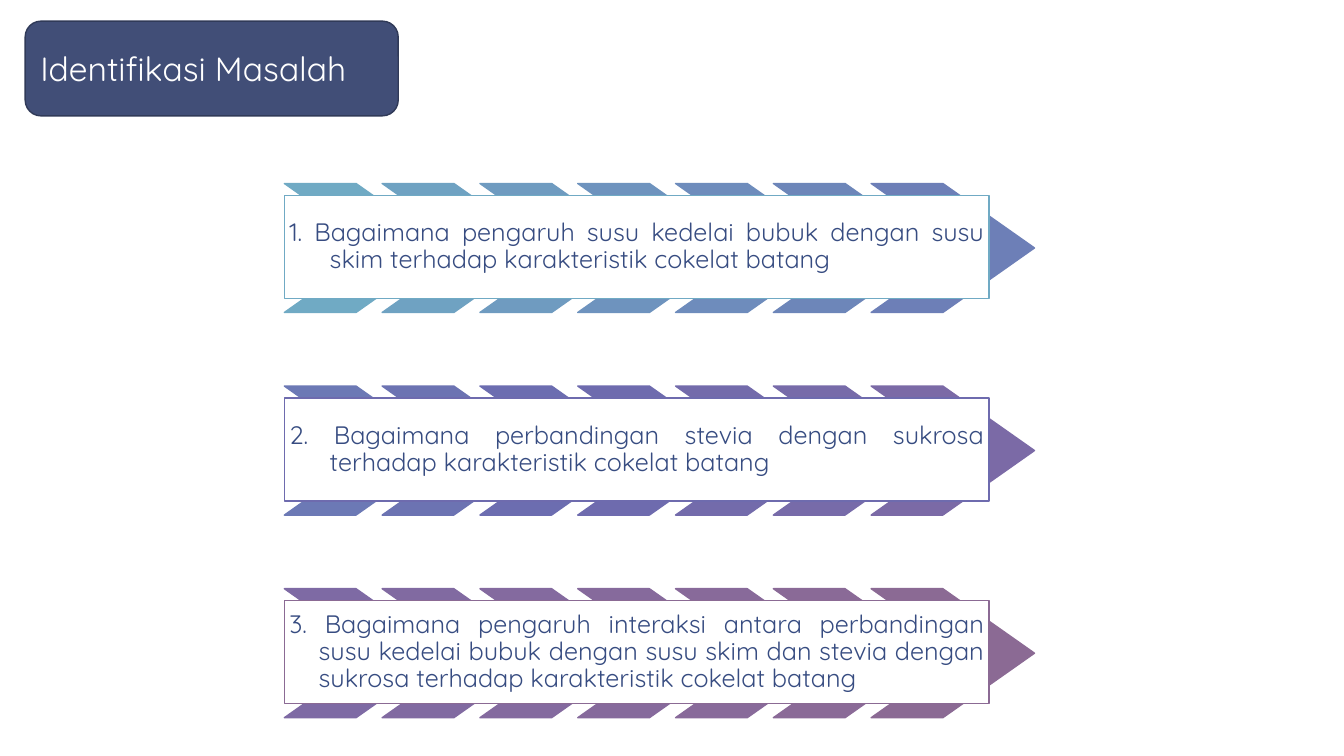
from lxml.etree import SubElement
from pptx import Presentation
from pptx.dml.color import RGBColor
from pptx.enum.shapes import MSO_SHAPE
from pptx.enum.text import MSO_ANCHOR, MSO_AUTO_SIZE, PP_ALIGN
from pptx.util import Emu, Pt

TITLE = "Identifikasi Masalah"
PROBLEMS = [
    ("1. Bagaimana pengaruh susu kedelai bubuk dengan susu skim terhadap karakteristik cokelat batang",
     40, "70AAC4 6FA2C2 6F9BC0 6E93BE 6E8CBC 6D86B9 6D7FB7"),
    ("2. Bagaimana perbandingan stevia dengan sukrosa terhadap karakteristik cokelat batang",
     40, "6C79B5 6C73B2 6C6DB0 6E6BAE 736BAB 776BA9 7B6AA6"),
    ("3. Bagaimana pengaruh interaksi antara perbandingan susu kedelai bubuk dengan susu skim "
     "dan stevia dengan sukrosa terhadap karakteristik cokelat batang",
     29, "7E6AA4 816AA1 846A9F 866A9C 886A9A 8A6A97 8B6A94"),
]

WHITE = RGBColor(0xFF, 0xFF, 0xFF)
NAVY = RGBColor(0x41, 0x4E, 0x77)
NAVY_EDGE = RGBColor(0x30, 0x3A, 0x58)
TEXT_BLUE = RGBColor(0x37, 0x4C, 0x81)
FONT = "Quicksand"

PX_PER_INCH = 100
ROW_LEFT, ROW_TOP, ROW_PITCH = 282, 182, 201
CHEVRON_WIDTH, CHEVRON_HEIGHT, CHEVRON_PITCH = 162, 128, 97
BOX_WIDTH, BOX_HEIGHT, BOX_OFFSET = 699, 102, 12


def px(length):
    return Emu(length * 914400 // PX_PER_INCH)


def apply(target, formats):
    for name, value in formats.items():
        setattr(target, name, value)


def add_panel(slide, kind, box, fill, edge):
    shape = slide.shapes.add_shape(kind, *map(px, box))
    shape.shadow.inherit = False
    shape.fill.solid()
    shape.fill.fore_color.rgb = fill
    shape.line.color.rgb = edge
    shape.line.width = Pt(1)
    return shape


def write_text(shape, text, inset, alignment, spacing, size, color):
    frame = shape.text_frame
    frame.text = text
    apply(frame, {
        "word_wrap": True, "auto_size": MSO_AUTO_SIZE.NONE,
        "vertical_anchor": MSO_ANCHOR.MIDDLE,
        "margin_left": px(inset), "margin_right": px(inset),
        "margin_top": px(5), "margin_bottom": px(5),
    })
    paragraph = frame.paragraphs[0]
    apply(paragraph, {"alignment": alignment, "line_spacing": spacing})
    font = paragraph.runs[0].font
    apply(font, {"name": FONT, "size": Pt(size)})
    font.color.rgb = color
    return paragraph


def add_title(slide):
    panel = add_panel(slide, MSO_SHAPE.ROUNDED_RECTANGLE, (25, 21, 370, 94), NAVY, NAVY_EDGE)
    title = slide.shapes.title
    title.element.addprevious(panel.element)
    apply(title, {"left": px(30), "top": px(21), "width": px(360), "height": px(94)})
    write_text(title, TITLE, 10, PP_ALIGN.LEFT, 1.0, 24, WHITE)


def add_problem(slide, row, text, indent, colors):
    top = ROW_TOP + row * ROW_PITCH
    colors = [RGBColor.from_string(color) for color in colors.split()]
    for column, color in enumerate(colors):
        left = ROW_LEFT + column * CHEVRON_PITCH
        chevron = add_panel(slide, MSO_SHAPE.CHEVRON,
                            (left, top, CHEVRON_WIDTH, CHEVRON_HEIGHT), color, color)
        chevron.adjustments[0] = 0.71
    box = add_panel(slide, MSO_SHAPE.RECTANGLE,
                    (ROW_LEFT, top + BOX_OFFSET, BOX_WIDTH, BOX_HEIGHT), WHITE, colors[row * 3])
    paragraph = write_text(box, text, 5, PP_ALIGN.JUSTIFY, 0.9, 18, TEXT_BLUE)
    properties = paragraph.runs[0].font
    hanging = paragraph._p.get_or_add_pPr()
    hanging.set("marL", str(px(indent)))
    hanging.set("indent", str(-px(indent)))


def main():
    presentation = Presentation()
    apply(presentation, {"slide_width": px(1333), "slide_height": px(750)})
    slide = presentation.slides.add_slide(presentation.slide_layouts[5])
    add_title(slide)
    for row, problem in enumerate(PROBLEMS):
        add_problem(slide, row, *problem)
    presentation.save("out.pptx")


if __name__ == "__main__":
    main()
